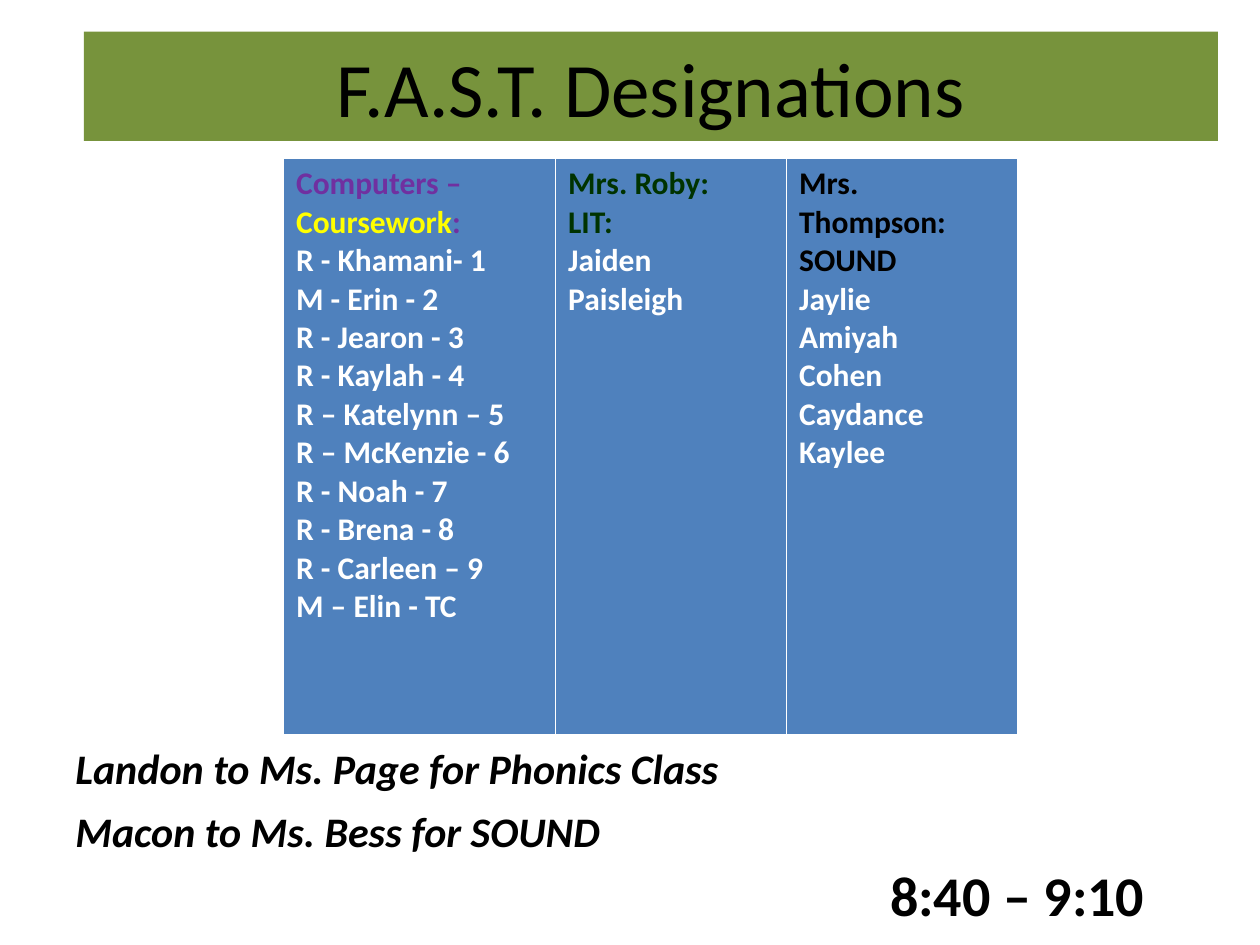
from dataclasses import dataclass
from typing import Any

from lxml import etree
from pptx import Presentation
from pptx.dml import color
from pptx.enum import shapes, text
from pptx.oxml import ns
from pptx.util import Pt

HUES = {
    "olive": "77933C", "blue": "4F81BD", "white": "FFFFFF", "black": "000000",
    "plum": "7030A0", "lemon": "FFFF00", "pine": "003300",
}
Line = list[tuple[str, str]]


@dataclass
class Group:
    """A table column: its width, coloured heading lines and pupil names."""
    width: float
    head: list[Line]
    names: list[str]


@dataclass
class Note:
    """A free line of text and its place."""
    words: str
    box: tuple[float, float, float, float]
    size: float
    slant: bool = False
    align: Any = text.PP_ALIGN.LEFT


GROUPS = [
    Group(155.5, [[("Computers –", "plum")], [("Coursework", "lemon"), (":", "plum")]],
          ["R - Khamani- 1", "M - Erin - 2", "R - Jearon - 3", "R - Kaylah - 4",
           "R – Katelynn – 5", "R – McKenzie - 6", "R - Noah - 7", "R - Brena - 8",
           "R - Carleen – 9", "M – Elin - TC"]),
    Group(132, [[("Mrs. Roby:", "pine")], [("LIT:", "pine")]], ["Jaiden", "Paisleigh"]),
    Group(132, [[("Mrs. Thompson:", "black")], [("SOUND", "black")]],
          ["Jaylie", "Amiyah", "Cohen", "Caydance", "Kaylee"]),
]
NOTES = [
    Note("8:40 – 9:10 ", (492, 488, 186, 46), 32, align=text.PP_ALIGN.CENTER),
    Note("Landon to Ms. Page for Phonics Class", (36, 421, 390, 36), 24, True),
    Note("Macon to Ms. Bess for SOUND", (36, 457, 390, 36), 24, True),
]
EDGES = {"lnL": 1, "lnR": 1, "lnT": 1, "lnB": 3}


def tint(name: str) -> color.RGBColor:
    """Return the named colour."""
    return color.RGBColor.from_string(HUES[name])


def write(frame: Any, lines: list[Line], *, size: float, bold: bool = True,
          slant: bool = False, align: Any = text.PP_ALIGN.LEFT) -> None:
    """Fill a text frame with lines of coloured runs."""
    frame.word_wrap = True
    for i, line in enumerate(lines):
        para = frame.add_paragraph() if i else frame.paragraphs[0]
        para.alignment = align
        for words, hue in line:
            run = para.add_run()
            run.text = words
            font = run.font
            font.name, font.size = "Calibri", Pt(size)
            font.bold, font.italic = bold, slant
            font.color.rgb = tint(hue)


def edge(cell: Any) -> None:
    """Draw white borders round a cell."""
    props = cell._tc.get_or_add_tcPr()
    for i, (side, width) in enumerate(EDGES.items()):
        line = etree.Element(ns.qn(f"a:{side}"), w=str(Pt(width)))
        fill = etree.SubElement(line, ns.qn("a:solidFill"))
        etree.SubElement(fill, ns.qn("a:srgbClr"), val=HUES["white"])
        props.insert(i, line)


def title(slide: Any) -> None:
    """Draw the title band."""
    band = slide.shapes.add_shape(
        shapes.MSO_SHAPE.RECTANGLE, Pt(48), Pt(18), Pt(648), Pt(62.5))
    band.shadow.inherit = False
    band.fill.solid()
    band.fill.fore_color.rgb = tint("olive")
    band.line.fill.background()
    band.text_frame.vertical_anchor = text.MSO_ANCHOR.MIDDLE
    write(band.text_frame, [[("F.A.S.T. Designations", "black")]],
          size=44, bold=False, align=text.PP_ALIGN.CENTER)


def label(slide: Any, note: Note) -> None:
    """Place one note."""
    box = slide.shapes.add_textbox(*map(Pt, note.box))
    write(box.text_frame, [[(note.words, "black")]], size=note.size,
          slant=note.slant, align=note.align)
    box.text_frame.auto_size = text.MSO_AUTO_SIZE.SHAPE_TO_FIT_TEXT


def roster(slide: Any) -> None:
    """Draw the table of groups."""
    total = sum(group.width for group in GROUPS)
    table = slide.shapes.add_table(
        1, len(GROUPS), Pt(162), Pt(90.5), Pt(total), Pt(330.5)).table
    for i, group in enumerate(GROUPS):
        table.columns[i].width = Pt(group.width)
        cell = table.cell(0, i)
        cell.fill.solid()
        cell.fill.fore_color.rgb = tint("blue")
        edge(cell)
        names = [[(name, "white")] for name in group.names]
        write(cell.text_frame, group.head + names, size=18)


def main() -> None:
    """Build and save the slide."""
    deck = Presentation()
    deck.slide_width, deck.slide_height = Pt(720), Pt(540)
    slide = deck.slides.add_slide(deck.slide_layouts[6])
    title(slide)
    for note in NOTES:
        label(slide, note)
    roster(slide)
    deck.save("out.pptx")


if __name__ == "__main__":
    main()
